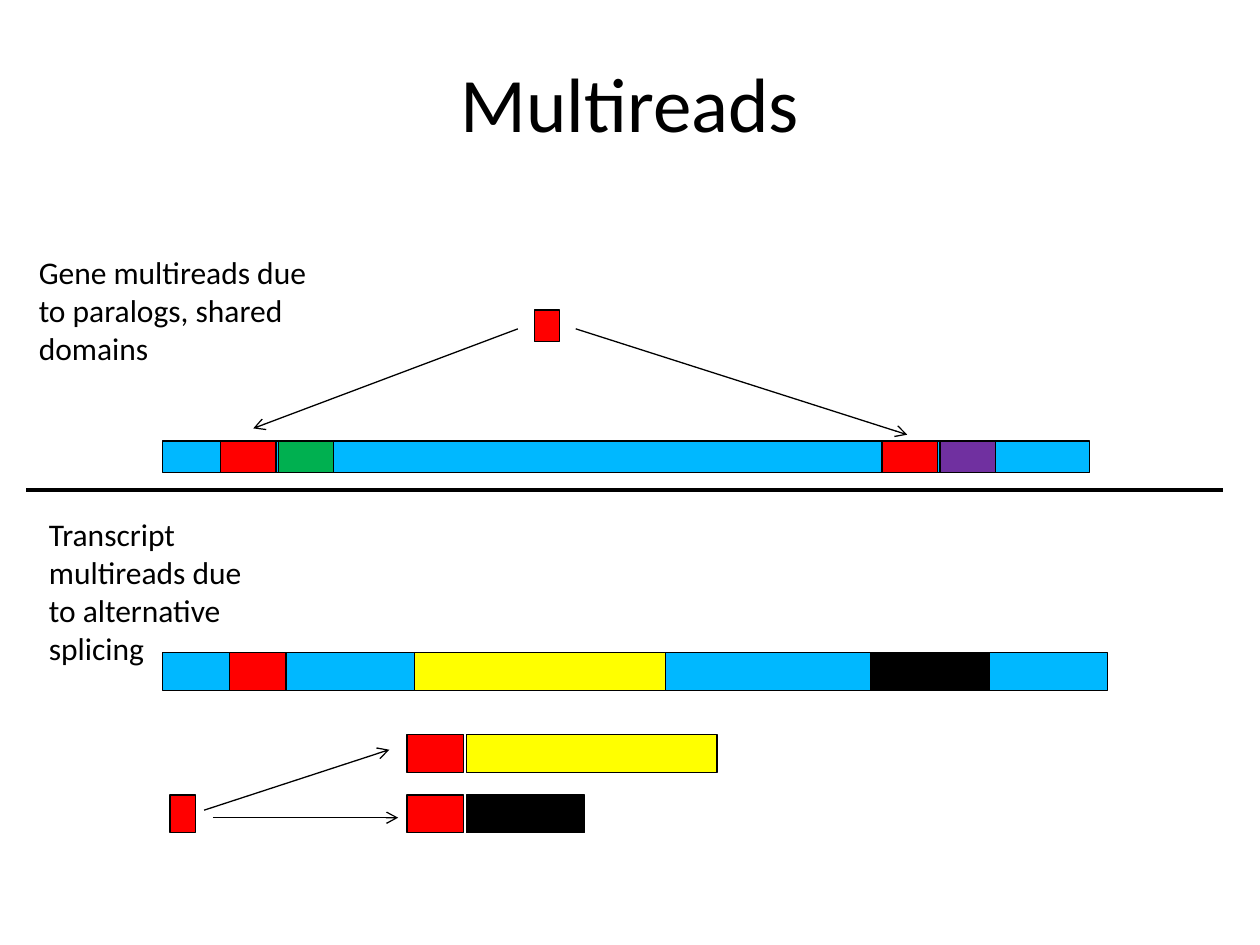
from lxml import etree
from pptx import Presentation
from pptx.dml.color import RGBColor
from pptx.enum.shapes import MSO_CONNECTOR, MSO_SHAPE
from pptx.enum.text import MSO_ANCHOR, PP_ALIGN
from pptx.oxml.ns import qn
from pptx.util import Emu, Pt

RECTANGLE = MSO_SHAPE.RECTANGLE
STRAIGHT = MSO_CONNECTOR.STRAIGHT
TOP, MIDDLE = MSO_ANCHOR.TOP, MSO_ANCHOR.MIDDLE
LEFT, CENTER = PP_ALIGN.LEFT, PP_ALIGN.CENTER

EMU_PER_PX = 9144  # 100 px to the inch
BLACK, RED, YELLOW = "000000", "FF0000", "FFFF00"
BLUE, GREEN, PURPLE = "00B8FF", "00B050", "7030A0"
TITLE_FORMAT = {"size": Pt(44), "name": "Calibri"}
CAPTION_FORMAT = {"size": Pt(18), "name": "Calibri"}


def px(*lengths):
    return [Emu(length * EMU_PER_PX) for length in lengths]


def color(hex_value):
    return RGBColor.from_string(hex_value)


def add_text(slide, box, text, font_format, align=LEFT, anchor=TOP):
    frame = slide.shapes.add_textbox(*px(*box)).text_frame
    frame.word_wrap = True
    frame.vertical_anchor = anchor
    paragraph = frame.paragraphs[0]
    paragraph.alignment = align
    run = paragraph.add_run()
    run.text = text
    for name, value in font_format.items():
        setattr(run.font, name, value)
    run.font.color.rgb = color(BLACK)


def add_block(shapes, box, fill):
    """Draw one outlined stretch of sequence."""
    shape = shapes.add_shape(RECTANGLE, *px(*box))
    shape.shadow.inherit = False
    shape.fill.solid()
    shape.fill.fore_color.rgb = color(fill)
    shape.line.color.rgb = color(BLACK)
    shape.line.width = Pt(0.75)


def add_line(shapes, start, end, width=0.75, arrow=False):
    connector = shapes.add_connector(STRAIGHT, *px(*start, *end))
    connector.line.color.rgb = color(BLACK)
    connector.line.width = Pt(width)
    if arrow:
        outline = connector.line._get_or_add_ln()
        etree.SubElement(outline, qn("a:tailEnd"), type="arrow")
    etree.SubElement(connector._element.spPr, qn("a:effectLst"))


def add_gene_panel(slide, left, top):
    """Show one read that matches two places in a genome."""
    shapes = slide.shapes.add_group_shape().shapes
    height, exon_width = 25, 44
    bar_top = top + 154
    add_block(shapes, (left + 108, bar_top, 736, height), BLUE)
    for x, fill in ((154, RED), (200, GREEN), (679, RED), (725, PURPLE)):
        add_block(shapes, (left + x, bar_top, exon_width, height), fill)
    add_block(shapes, (left + 403, top + 50, 20, height), RED)
    for start_x, end_x, end_y in ((390, 180, 144), (436, 699, 149)):
        add_line(shapes, (left + start_x, top + 65),
                 (left + end_x, top + end_y), arrow=True)


def add_transcript_panel(slide, left, top):
    """Show one read that matches two spliced forms of a gene."""
    shapes = slide.shapes.add_group_shape().shapes
    height, shared_width = 30, 45
    bar_top = top + 114
    exon_widths = {RED: shared_width, YELLOW: 199, BLACK: 94}
    add_block(shapes, (left + 100, bar_top, 750, height), BLUE)
    for x, fill in ((153, RED), (300, YELLOW), (662, BLACK)):
        add_block(shapes, (left + x, bar_top, exon_widths[fill], height), fill)
    for y, fill in ((179, YELLOW), (227, BLACK)):
        add_block(shapes, (left + 294, top + y, shared_width, height), RED)
        add_block(shapes, (left + 341, top + y, exon_widths[fill], height), fill)
    add_block(shapes, (left + 106, top + 227, 20, height), RED)
    for start_x, start_y, end_y in ((133, 239, 191), (140, 245, 245)):
        add_line(shapes, (left + start_x, top + start_y),
                 (left + start_x + 147, top + end_y), arrow=True)


def main():
    presentation = Presentation()
    presentation.slide_width, presentation.slide_height = px(1000, 750)
    slide = presentation.slides.add_slide(presentation.slide_layouts[6])

    add_text(slide, (50, 18, 900, 125), "Multireads", TITLE_FORMAT,
             CENTER, MIDDLE)
    add_gene_panel(slide, 21, 196)
    add_transcript_panel(slide, 29, 404)
    add_text(slide, (21, 196, 243, 100),
             "Gene multireads due to paralogs, shared domains", CAPTION_FORMAT)
    add_text(slide, (29, 404, 193, 130),
             "Transcript multireads due to alternative splicing",
             CAPTION_FORMAT)
    add_line(slide.shapes, (21, 389), (971, 389), width=2)
    presentation.save("out.pptx")


if __name__ == "__main__":
    main()
